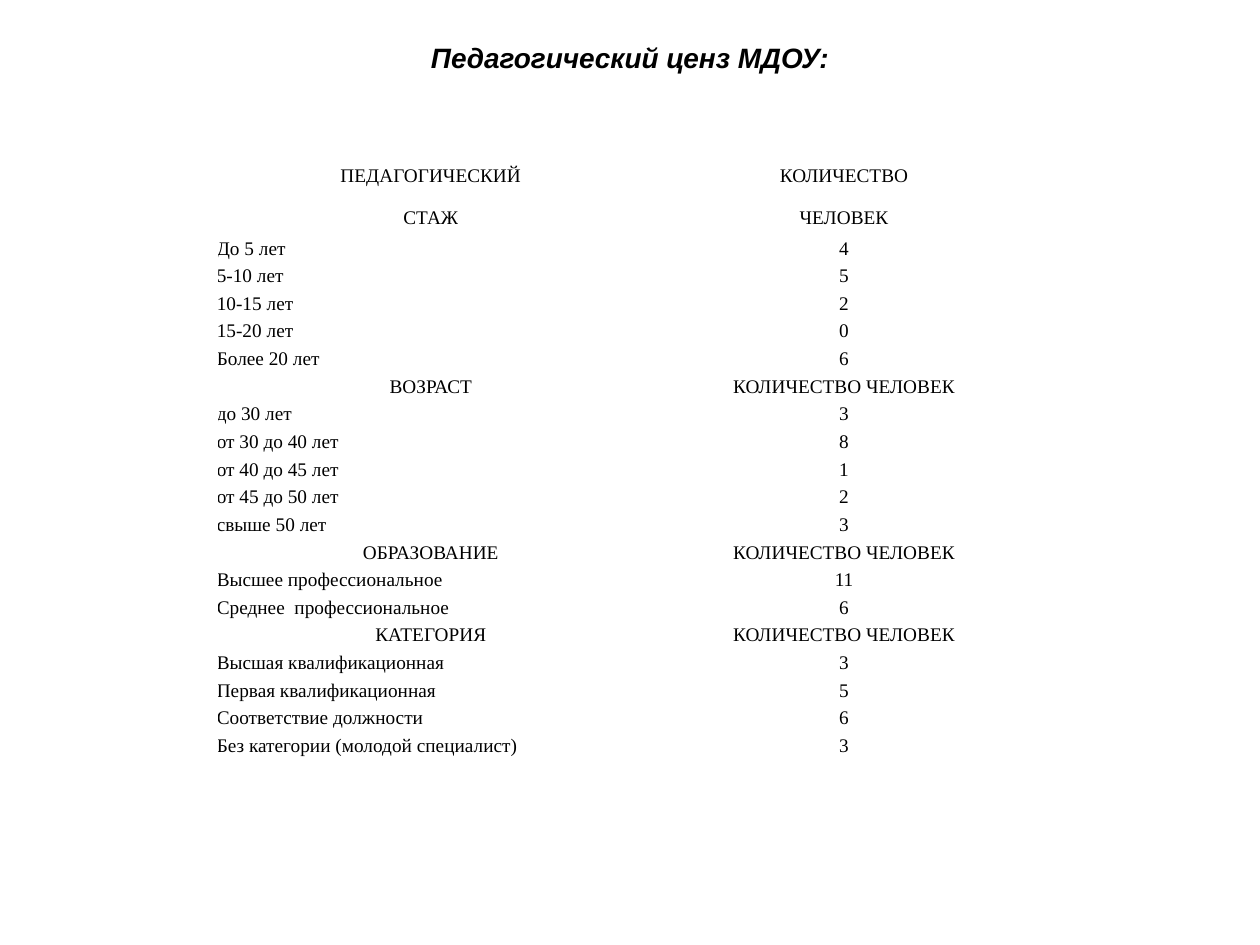
from pptx import Presentation
from pptx.dml.color import RGBColor
from pptx.enum.text import MSO_ANCHOR, PP_ALIGN
from pptx.util import Cm, Pt

BLACK = RGBColor(0, 0, 0)
PEOPLE = "КОЛИЧЕСТВО ЧЕЛОВЕК"

# Each section: heading, count heading, rows
SECTIONS = [
    ("ПЕДАГОГИЧЕСКИЙ\nСТАЖ", "КОЛИЧЕСТВО\nЧЕЛОВЕК", [
        ("До 5 лет", 4), ("5-10 лет", 5), ("10-15 лет", 2),
        ("15-20 лет", 0), ("Более 20 лет", 6)]),
    ("ВОЗРАСТ", PEOPLE, [
        ("до 30 лет", 3), ("от 30 до 40 лет", 8), ("от 40 до 45 лет", 1),
        ("от 45 до 50 лет", 2), ("свыше 50 лет", 3)]),
    ("ОБРАЗОВАНИЕ", PEOPLE, [
        ("Высшее профессиональное", 11), ("Среднее  профессиональное", 6)]),
    ("КАТЕГОРИЯ", PEOPLE, [
        ("Высшая квалификационная", 3), ("Первая квалификационная", 5),
        ("Соответствие должности", 6),
        ("Без категории (молодой специалист)", 3)]),
]


class SlideBuilder:
    title_font, title_size = "Arial", Pt(16)
    table_font, table_size = "Times New Roman", Pt(11)

    def __init__(self, prs):
        self.s = prs.slides.add_slide(prs.slide_layouts[5])

    def title(self, text, left, top, width, height):
        sp = self.s.shapes.title
        sp.left, sp.top, sp.width, sp.height = left, top, width, height
        tf = sp.text_frame
        tf.text = text
        tf.vertical_anchor = MSO_ANCHOR.MIDDLE
        tf.margin_top, tf.margin_bottom = Cm(0.4), Cm(0.13)
        p = tf.paragraphs[0]
        p.alignment = PP_ALIGN.CENTER
        self.style(p, self.title_font, self.title_size)
        p.font.bold = p.font.italic = True

    def style(self, p, name, size):
        p.font.name, p.font.size = name, size
        p.font.color.rgb = BLACK

    def cell(self, cell, text, align):
        cell.fill.background()
        cell.vertical_anchor = MSO_ANCHOR.MIDDLE
        cell.margin_left = cell.margin_right = 0
        cell.margin_top = cell.margin_bottom = 0
        cell.text = text
        for p in cell.text_frame.paragraphs:
            p.alignment = align
            p.line_spacing, p.space_after = 1.15, Pt(10)
            self.style(p, self.table_font, self.table_size)

    def table(self, sections, left, top, widths, height, first_height):
        rows = []
        for heading, count_heading, items in sections:
            rows.append((heading, count_heading, PP_ALIGN.CENTER))
            rows += [(label, str(n), PP_ALIGN.LEFT) for label, n in items]
        table = self.s.shapes.add_table(
            len(rows), len(widths), left, top, sum(widths), height).table
        table.first_row = table.horz_banding = False
        for column, width in zip(table.columns, widths):
            column.width = width
        row_height = (height - first_height) // (len(rows) - 1)
        for i, (label, count, align) in enumerate(rows):
            table.rows[i].height = row_height if i else first_height
            self.cell(table.cell(i, 0), label, align)
            self.cell(table.cell(i, 1), count, PP_ALIGN.CENTER)


def main():
    prs = Presentation()
    prs.slide_width, prs.slide_height = Cm(25.4), Cm(19.05)
    slide = SlideBuilder(prs)

    # Heading across the slide
    slide.title("Педагогический ценз МДОУ:", 0, 0, prs.slide_width, Cm(2.06))

    # Staff by experience, age, education and category
    slide.table(SECTIONS, Cm(4.37), Cm(3.18), (Cm(8.63), Cm(8.03)),
                Cm(12.12), Cm(1.52))
    prs.save("out.pptx")


if __name__ == "__main__":
    main()
